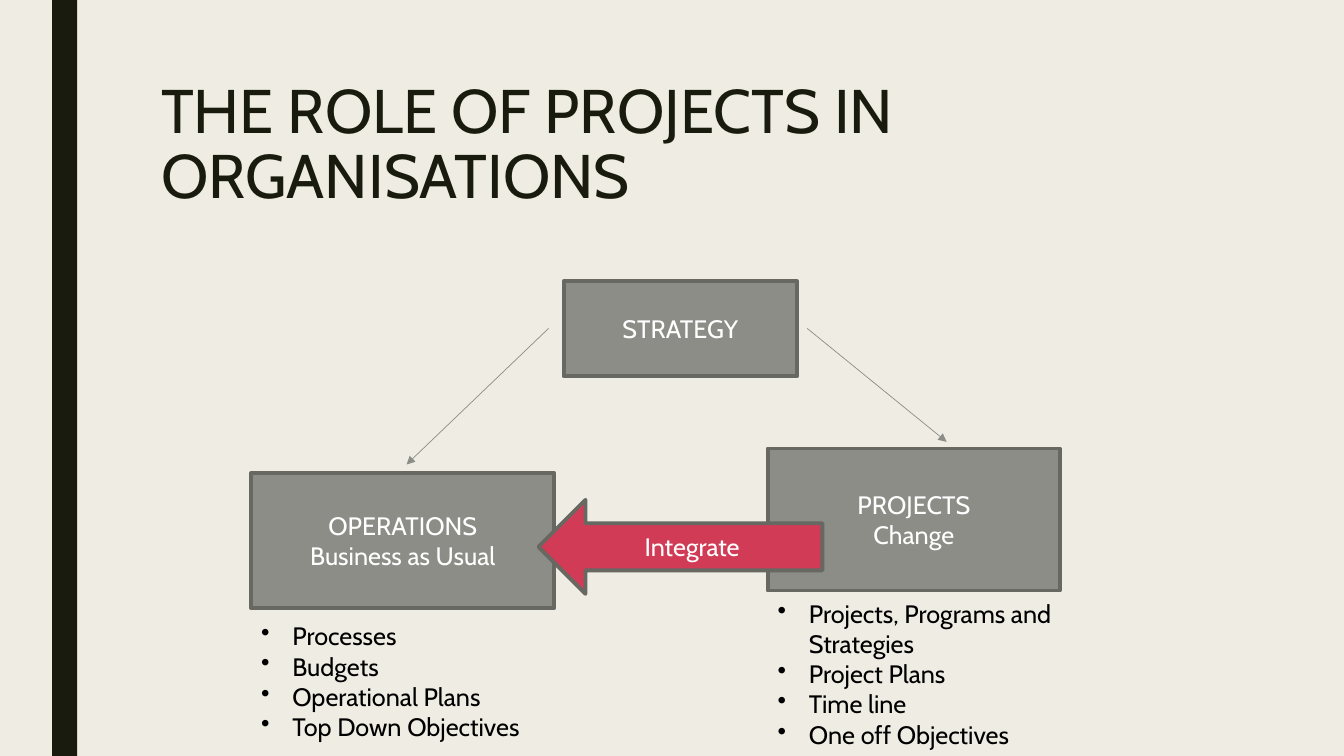
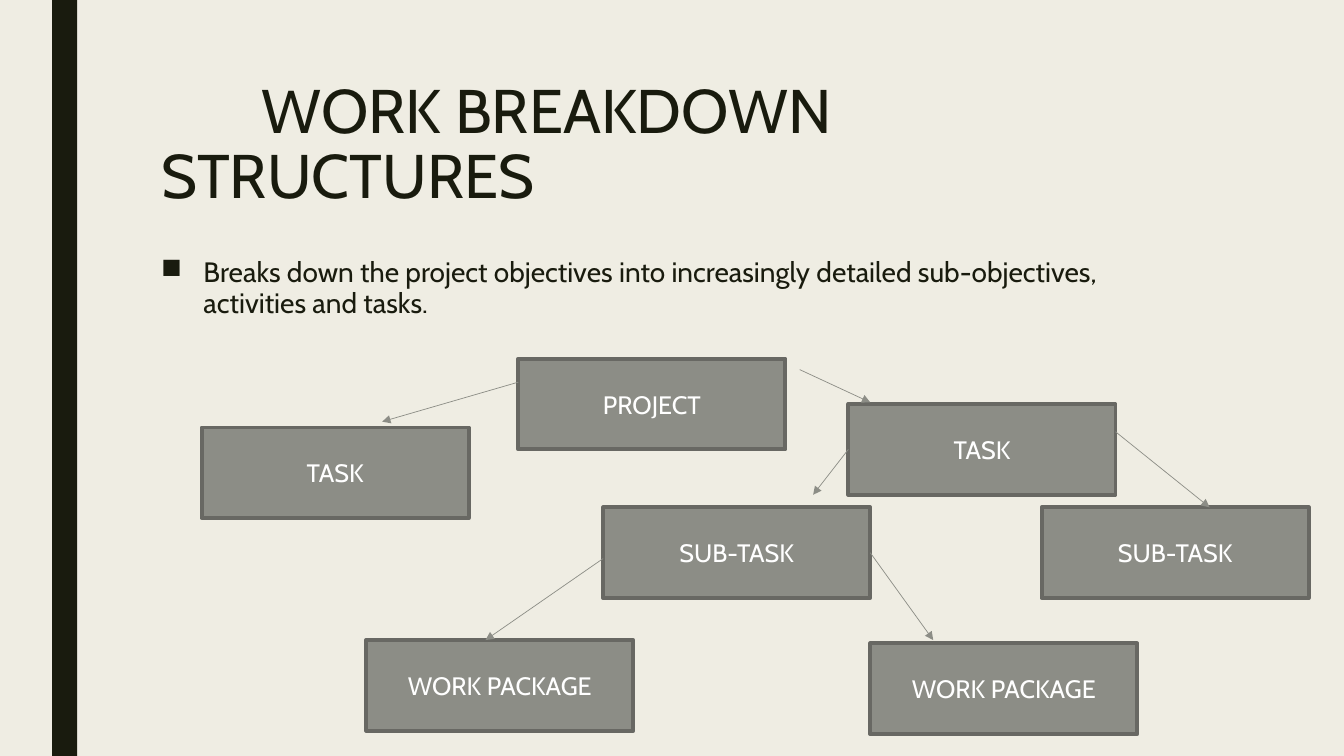
from dataclasses import dataclass
from typing import Optional

from lxml.etree import SubElement as Sub
from pptx import Presentation
from pptx.dml.color import RGBColor as Rgb
from pptx.enum.shapes import MSO_CONNECTOR as Link, MSO_SHAPE as Form
from pptx.enum.text import MSO_ANCHOR as Anchor, PP_ALIGN as Align
from pptx.oxml.ns import qn
from pptx.util import Inches, Pt

# Shared look; lengths are columns and rows of a 160 by 90 grid
WIDE, HIGH = Inches(13.33), Inches(7.5)
COLS, ROWS = 160, 90
FONT = "Cabin"
HUES = {
    "paper": "EFEDE3", "ink": "191B0E", "box": "8C8D86", "edge": "686863",
    "accent": "D13B56", "white": "FFFFFF", "black": "000000",
}


@dataclass(frozen=True)
class Area:
    col: float
    row: float
    wide: float
    high: float

    def place(self) -> tuple[int, int, int, int]:
        return across(self.col), down(self.row), across(self.wide), down(self.high)


@dataclass(frozen=True)
class Box:
    area: Area
    lines: tuple[str, ...]
    fill: str = "box"
    form: Form = Form.RECTANGLE


@dataclass(frozen=True)
class Arrow:
    start: tuple[float, float]
    end: tuple[float, float]
    box: Optional[int] = None  # box joined at the start
    side: int = 0


@dataclass(frozen=True)
class Style:
    size: float
    hue: str
    align: Align = Align.LEFT
    pitch: float = 1.0
    before: float = 0
    after: float = 0
    left: float = 0  # left margin, inches
    first: float = 0  # first line indent, inches
    mark: str = ""
    scale: int = 100  # bullet size, percent


TITLE = Style(44, "ink", pitch=0.89)
INSET = Style(44, "ink", pitch=0.89, first=1)
LABEL = Style(18, "white", Align.CENTER)
ITEM = Style(18, "black", left=0.31, first=-0.31, mark="•")
POINT = Style(20, "ink", pitch=0.94, before=10, after=2,
              left=0.42, first=-0.42, mark="■")


def across(cols: float) -> int:
    return round(WIDE * cols / COLS)


def down(rows: float) -> int:
    return round(HIGH * rows / ROWS)


def tint(name: str) -> Rgb:
    return Rgb.from_string(HUES[name])


def write(frame, lines: tuple[str, ...], style: Style) -> None:
    frame.word_wrap = True
    for spot, text in enumerate(lines):
        para = frame.paragraphs[0] if spot == 0 else frame.add_paragraph()
        para.alignment = style.align
        para.line_spacing = style.pitch
        para.space_before, para.space_after = Pt(style.before), Pt(style.after)
        props = para._p.get_or_add_pPr()
        props.set("marL", str(Inches(style.left)))
        props.set("indent", str(Inches(style.first)))
        if style.mark:
            Sub(props, qn("a:buSzPct")).set("val", str(style.scale * 1000))
            Sub(props, qn("a:buChar")).set("char", style.mark)
        run = para.add_run()
        run.text = text
        run.font.name, run.font.size = FONT, Pt(style.size)
        run.font.color.rgb = tint(style.hue)


def add_text(slide, area: Area, lines: tuple[str, ...], style: Style) -> None:
    write(slide.shapes.add_textbox(*area.place()).text_frame, lines, style)


def add_form(slide, form: Form, area: Area, fill: str):
    shape = slide.shapes.add_shape(form, *area.place())
    shape.shadow.inherit = False
    shape.fill.solid()
    shape.fill.fore_color.rgb = tint(fill)
    return shape


def add_box(slide, box: Box):
    shape = add_form(slide, box.form, box.area, box.fill)
    shape.line.color.rgb = tint("edge")
    shape.line.width = Pt(2.75)
    shape.text_frame.vertical_anchor = Anchor.MIDDLE
    write(shape.text_frame, box.lines, LABEL)
    return shape


def add_arrow(slide, arrow: Arrow, shapes: list) -> None:
    (left, top), (right, base) = arrow.start, arrow.end
    line = slide.shapes.add_connector(
        Link.STRAIGHT, across(left), down(top), across(right), down(base))
    if arrow.box is not None:
        line.begin_connect(shapes[arrow.box], arrow.side)
    line.line.color.rgb = tint("box")
    line.line.width = Pt(0.5)
    props = line._element.spPr
    Sub(props.find(qn("a:ln")), qn("a:tailEnd")).set("type", "triangle")
    Sub(props, qn("a:effectLst"))


def add_slide(deck, title: str, style: Style):
    slide = deck.slides.add_slide(deck.slide_layouts[6])
    slide.background.fill.solid()
    slide.background.fill.fore_color.rgb = tint("paper")
    band = add_form(slide, Form.RECTANGLE, Area(6.2, 0, 3, ROWS), "ink")
    band.line.fill.background()
    add_text(slide, Area(18, 9, 126, 19.4), (title,), style)
    return slide


def add_chart(slide, boxes: list[Box], arrows: list[Arrow]) -> None:
    shapes = [add_box(slide, box) for box in boxes]
    for arrow in arrows:
        add_arrow(slide, arrow, shapes)


def add_roles(deck) -> None:
    slide = add_slide(deck, "THE ROLE OF PROJECTS IN ORGANISATIONS", TITLE)
    add_chart(slide, [
        Box(Area(67.1, 33.5, 27.8, 11.3), ("STRATEGY",)),
        Box(Area(29.9, 56.3, 36.1, 16.1), ("OPERATIONS", "Business as Usual")),
        Box(Area(91.4, 53.4, 34.8, 16.9), ("PROJECTS", "Change")),
        Box(Area(64.1, 59.5, 33.8, 11.2), ("Integrate",), "accent", Form.LEFT_ARROW),
    ], [
        Arrow((96.1, 39.1), (112.7, 52.6)),
        Arrow((65.3, 39.1), (48.4, 55.3)),
    ])
    # Lists under the two lower boxes
    add_text(slide, Area(29.9, 73.3, 36.1, 15.7), (
        "Processes", "Budgets", "Operational Plans", "Top Down Objectives"), ITEM)
    add_text(slide, Area(91.4, 70.6, 36.1, 19.4), (
        "Projects, Programs and Strategies", "Project Plans", "Time line",
        "One off Objectives"), ITEM)


def add_tree(deck) -> None:
    slide = add_slide(deck, "WORK BREAKDOWN STRUCTURES", INSET)
    add_text(slide, Area(18, 30, 126, 47), (
        "Breaks down the project objectives into increasingly detailed "
        "sub-objectives, activities and tasks.",), POINT)
    # Equal boxes, from the project down to its packages
    nodes = [
        ("PROJECT", 61.7, 42.7), ("TASK", 24, 50.9), ("TASK", 101, 48.1),
        ("SUB-TASK", 71.8, 60.4), ("SUB-TASK", 124, 60.4),
        ("WORK PACKAGE", 43.6, 76.2), ("WORK PACKAGE", 103.6, 76.6),
    ]
    add_chart(slide, [
        Box(Area(col, row, 31.8, 10.8), (name,)) for name, col, row in nodes
    ], [
        Arrow((61.7, 45.5), (45.5, 50.2)),
        Arrow((95.2, 44), (103.6, 47.9)),
        Arrow((101, 53.5), (96.8, 58.9), box=2, side=1),
        Arrow((132.8, 51.4), (144, 60.4)),
        Arrow((103.6, 65.8), (111.1, 76.2), box=3, side=3),
        Arrow((71.8, 66.5), (57.8, 76.2)),
    ])


def main() -> None:
    deck = Presentation()
    deck.slide_width, deck.slide_height = WIDE, HIGH
    add_roles(deck)
    add_tree(deck)
    deck.save("out.pptx")


if __name__ == "__main__":
    main()
